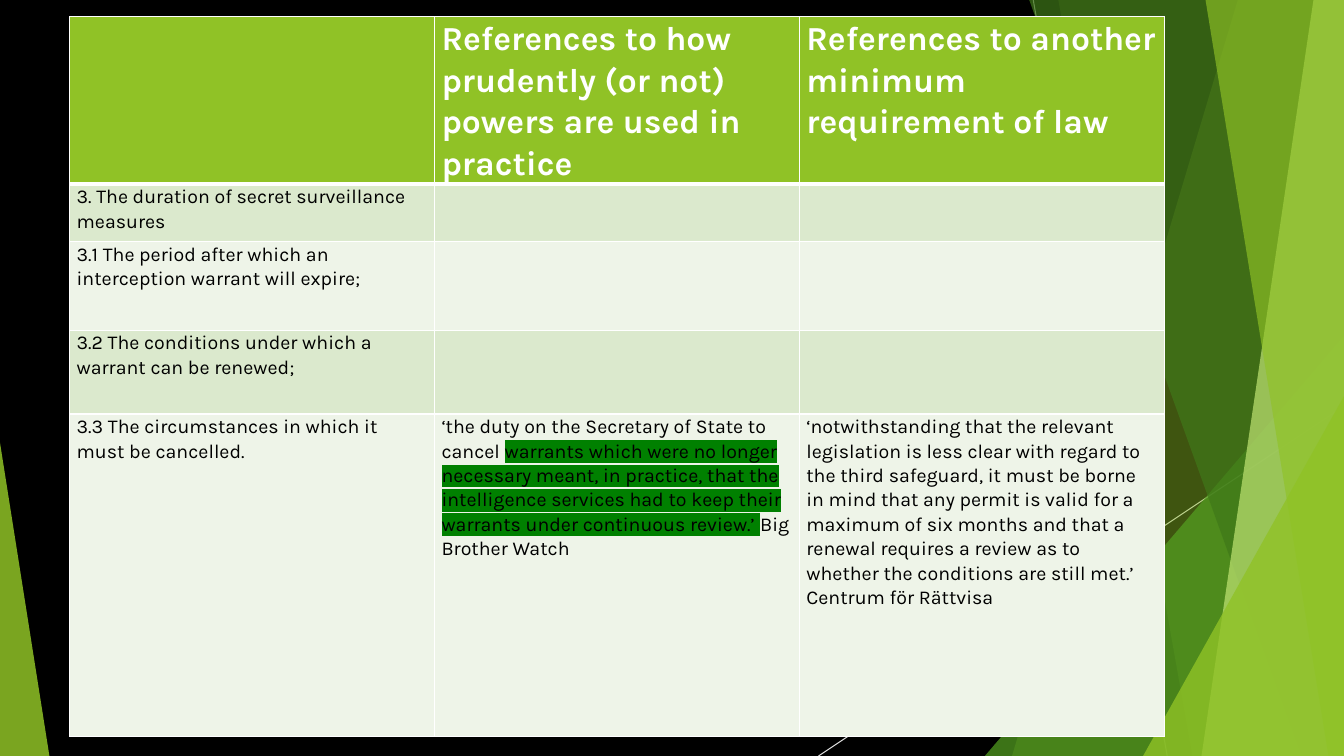
from dataclasses import dataclass
from typing import Optional

from lxml import etree
from pptx import Presentation
from pptx import util as u
from pptx.dml import color
from pptx.enum import shapes
from pptx.oxml import ns

WIDTH, HEIGHT = u.Inches(13.333), u.Inches(7.5)
COLORS = {
    "black": "000000", "white": "FFFFFF", "lime": "90C226", "green": "54A021",
    "forest": "3F7819", "pale": "C0E474", "silver": "BFBFBF", "mist": "D9D9D9",
    "band_dark": "DBE9CD", "band_light": "EEF4E8", "marker": "008000",
}
HEADER_FORMAT = {"size": u.Pt(24), "name": "Karla", "bold": True}
BODY_FORMAT = {"size": u.Pt(14), "name": "Karla", "bold": False}
CELL_FORMAT = {
    "margin_left": u.Inches(0.07), "margin_right": u.Inches(0.07),
    "margin_top": 0, "margin_bottom": 0,
}
TABLE_LEFT, TABLE_TOP, COLUMN_WIDTH = 5.18, 2.2, 27.15
ROW_HEIGHTS = [22.13, 7.6, 11.73, 11.07, 42.67]


@dataclass
class Ray:
    start: tuple[float, float]
    end: tuple[float, float]
    color: str


@dataclass
class Shard:
    top_left: float
    bottom_left: float
    color: str
    opacity: int


@dataclass
class Corner:
    left: float
    top: float
    width: float
    height: float
    apex: float
    color: str
    opacity: int


@dataclass
class Span:
    words: str
    marker: Optional[str] = None


RAYS = [
    Ray((76.88, 0), (86.85, 100), "silver"),
    Ray((100, 53.73), (60.9, 100), "mist"),
]
FACETS = [
    Shard(92.1, 75.3, "lime", 30),
    Shard(78.75, 88.73, "lime", 20),
    Corner(73.28, 44.4, 26.72, 55.6, 1, "green", 72),
    Shard(76.58, 96.83, "forest", 70),
    Shard(97.73, 89.4, "pale", 70),
    Shard(89.7, 98.85, "lime", 65),
    Corner(85.05, 52.4, 14.95, 47.6, 1, "lime", 80),
    Corner(0, 58.53, 3.68, 41.47, 0, "lime", 85),
]
ROWS = [
    [
        [],
        [Span("References to how prudently (or not) powers are used in practice")],
        [Span("References to another minimum requirement of law")],
    ],
    [[Span("3. The duration of secret surveillance \nmeasures")], [], []],
    [[Span("3.1 The period after which an interception warrant will expire;")], [], []],
    [[Span("3.2 The conditions under which a warrant can be renewed;")], [], []],
    [
        [Span("3.3 The circumstances in which it must be cancelled.")],
        [
            Span("‘the duty on the Secretary of State to cancel "),
            Span("warrants which were no longer necessary meant, in practice, that the "
                 "intelligence services had to keep their warrants under continuous "
                 "review.’ ", "marker"),
            Span("Big Brother Watch"),
        ],
        [Span("‘notwithstanding that the relevant legislation is less clear with regard "
              "to the third safeguard, it must be borne in mind that any permit is valid "
              "for a maximum of six months and that a renewal requires a review as to "
              "whether the conditions are still met.’ Centrum för Rättvisa")],
    ],
]


def across(share: float) -> int:
    return round(WIDTH * share / 100)


def down(share: float) -> int:
    return round(HEIGHT * share / 100)


def rgb(name: str) -> color.RGBColor:
    return color.RGBColor.from_string(COLORS[name])


def apply_format(target, values: dict) -> None:
    for name, value in values.items():
        setattr(target, name, value)


def draw_ray(page, ray: Ray) -> None:
    line = page.shapes.add_connector(
        shapes.MSO_CONNECTOR.STRAIGHT, across(ray.start[0]), down(ray.start[1]),
        across(ray.end[0]), down(ray.end[1]))
    line.line.color.rgb = rgb(ray.color)
    line.line.width = u.Pt(0.75)
    etree.SubElement(line._element.spPr, ns.qn("a:effectLst"))


def draw_facet(page, facet: Shard | Corner) -> None:
    if isinstance(facet, Shard):
        outline = page.shapes.build_freeform(across(facet.top_left), 0)
        outline.add_line_segments(
            [(WIDTH, 0), (WIDTH, HEIGHT), (across(facet.bottom_left), HEIGHT)], close=True)
        shape = outline.convert_to_shape()
    else:
        shape = page.shapes.add_shape(
            shapes.MSO_SHAPE.ISOSCELES_TRIANGLE, across(facet.left), down(facet.top),
            across(facet.width), down(facet.height))
        shape.adjustments[0] = facet.apex
    shape.shadow.inherit = False
    shape.line.fill.background()
    shape.fill.solid()
    shape.fill.fore_color.rgb = rgb(facet.color)
    tint = shape._element.spPr.find(ns.qn("a:solidFill"))[0]
    etree.SubElement(tint, ns.qn("a:alpha"), val=str(facet.opacity * 1000))


def add_solid(parent, tag: str, name: str):
    holder = etree.SubElement(parent, ns.qn(tag))
    etree.SubElement(holder, ns.qn("a:srgbClr"), val=COLORS[name])
    return holder


def write_span(para, span: Span, font_format: dict, ink: str) -> None:
    for index, words in enumerate(span.words.split("\n")):
        if index:
            para.add_line_break()
        run = para.add_run()
        run.text = words
        run.font.color.rgb = rgb(ink)
        apply_format(run.font, font_format)
        if span.marker:
            properties = run._r.get_or_add_rPr()
            highlight = etree.SubElement(properties, ns.qn("a:highlight"))
            etree.SubElement(highlight, ns.qn("a:srgbClr"), val=COLORS[span.marker])
            properties.find(ns.qn("a:solidFill")).addnext(highlight)


def border_header(cell) -> None:
    properties = cell._tc.get_or_add_tcPr()
    for index, (side, points) in enumerate([("L", 1), ("R", 1), ("T", 1), ("B", 3)]):
        edge = etree.Element(ns.qn(f"a:ln{side}"), w=str(u.Pt(points)))
        add_solid(edge, "a:solidFill", "white")
        properties.insert(index, edge)


def draw_table(page) -> None:
    table = page.shapes.add_table(
        len(ROWS), len(ROWS[0]), across(TABLE_LEFT), down(TABLE_TOP),
        across(COLUMN_WIDTH * len(ROWS[0])), down(sum(ROW_HEIGHTS))).table
    for column in table.columns:
        column.width = across(COLUMN_WIDTH)
    for row_index, (contents, height) in enumerate(zip(ROWS, ROW_HEIGHTS)):
        table.rows[row_index].height = down(height)
        header = row_index == 0
        band = "lime" if header else ("band_light", "band_dark")[row_index % 2]
        for column_index, spans in enumerate(contents):
            cell = table.cell(row_index, column_index)
            apply_format(cell, CELL_FORMAT)
            cell.fill.solid()
            cell.fill.fore_color.rgb = rgb(band)
            if header:
                border_header(cell)
            para = cell.text_frame.paragraphs[0]
            para.line_spacing = 1.07
            for span in spans:
                write_span(para, span, HEADER_FORMAT if header else BODY_FORMAT,
                           "white" if header else "black")


def main() -> None:
    deck = Presentation()
    apply_format(deck, {"slide_width": WIDTH, "slide_height": HEIGHT})
    page = deck.slides.add_slide(deck.slide_layouts.get_by_name("Blank"))
    page.background.fill.solid()
    page.background.fill.fore_color.rgb = rgb("black")
    for ray in RAYS:
        draw_ray(page, ray)
    for facet in FACETS:
        draw_facet(page, facet)
    draw_table(page)
    deck.save("out.pptx")


if __name__ == "__main__":
    main()
